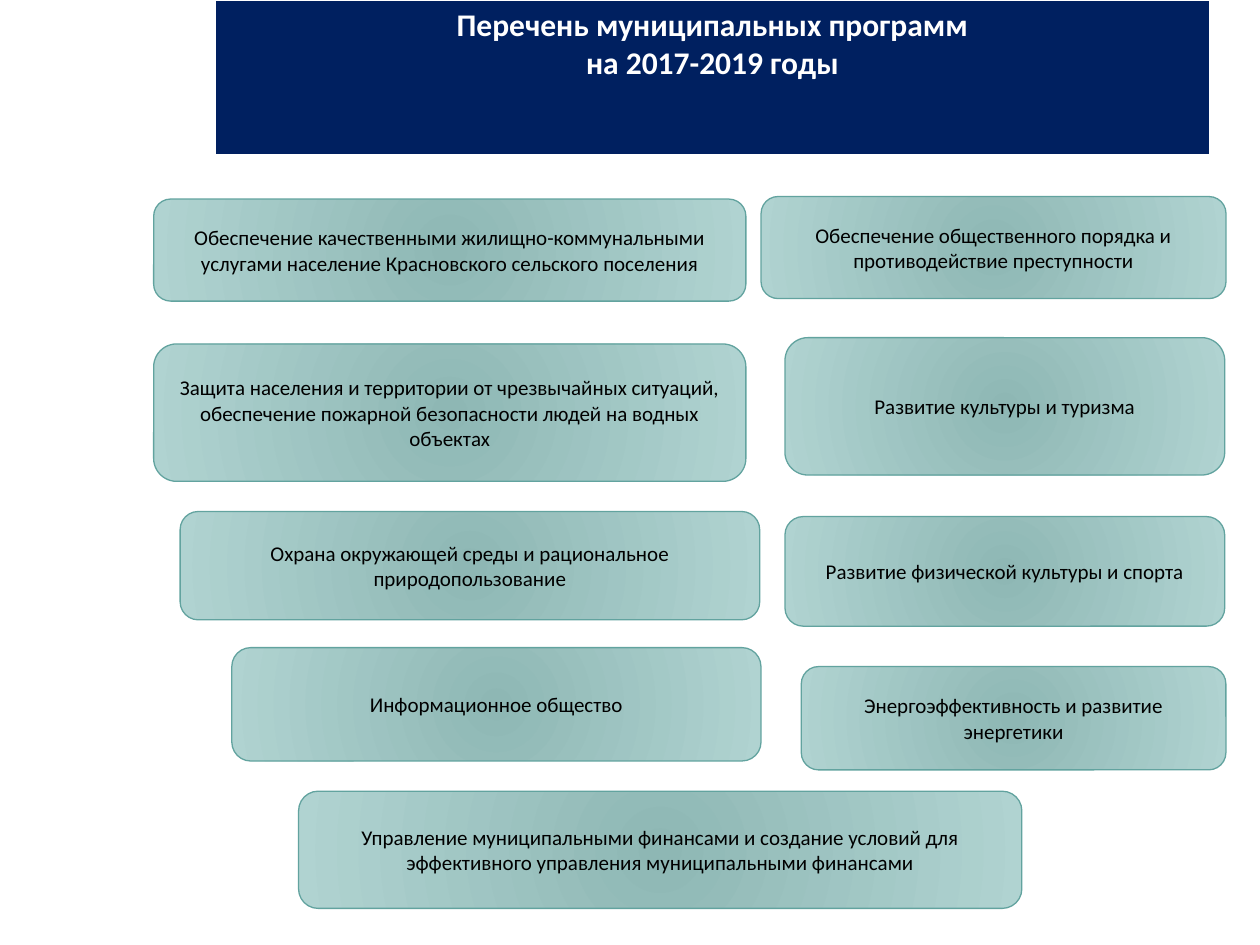
from lxml.etree import SubElement
from pptx import Presentation
from pptx.dml.color import RGBColor
from pptx.enum.shapes import MSO_SHAPE
from pptx.enum.text import MSO_ANCHOR, PP_ALIGN
from pptx.oxml.ns import qn
from pptx.util import Inches, Pt

NAVY = RGBColor(0x00, 0x20, 0x60)
WHITE = RGBColor(0xFF, 0xFF, 0xFF)
BLACK = RGBColor(0x00, 0x00, 0x00)
TEAL_DARK = RGBColor(0x8E, 0xB7, 0xB4)
TEAL_LIGHT = RGBColor(0xB0, 0xD3, 0xD1)
TEAL_LINE = RGBColor(0x62, 0xA3, 0x9F)

TITLE = ["Перечень муниципальных программ", "на 2017-2019 годы"]
PROGRAMS = [
    (1.22, 1.58, 4.7, 0.81, "Обеспечение качественными жилищно-коммунальными услугами "
                            "население Красновского сельского поселения"),
    (6.04, 1.56, 3.69, 0.81, "Обеспечение общественного порядка и противодействие преступности"),
    (6.23, 2.68, 3.49, 1.09, "Развитие культуры и туризма"),
    (6.23, 4.1, 3.49, 0.87, "Развитие физической культуры и спорта"),
    (1.22, 2.73, 4.7, 1.09, "Защита населения и территории от чрезвычайных ситуаций, "
                            "обеспечение пожарной безопасности людей на водных объектах"),
    (1.43, 4.06, 4.6, 0.86, "Охрана окружающей среды и рациональное природопользование"),
    (1.84, 5.14, 4.2, 0.9, "Информационное общество"),
    (6.36, 5.29, 3.37, 0.82, "Энергоэффективность и развитие энергетики"),
    (2.37, 6.28, 5.74, 0.93, "Управление муниципальными финансами и создание условий для "
                             "эффективного управления муниципальными финансами"),
]


class SlideBuilder:
    """Draws the title table and program boxes on one slide in a shared style."""

    font = "Calibri"

    def __init__(self, slide):
        self.s = slide

    def text(self, tf, lines, size, color, bold=False):
        for i, line in enumerate(lines):
            p = tf.add_paragraph() if i else tf.paragraphs[0]
            p.alignment = PP_ALIGN.CENTER
            r = p.add_run()
            r.text = line
            r.font.name = self.font
            r.font.size = Pt(size)
            r.font.bold = bold
            r.font.color.rgb = color

    def title(self, x, y, w, h, lines):
        frame = self.s.shapes.add_table(1, 1, Inches(x), Inches(y), Inches(w), Inches(h))
        cell = frame.table.cell(0, 0)
        cell.fill.solid()
        cell.fill.fore_color.rgb = NAVY
        self.text(cell.text_frame, lines, 18, WHITE, bold=True)

    def radial_fill(self, sp):
        sp.fill.gradient()
        for stop, color in zip(sp.fill.gradient_stops, (TEAL_DARK, TEAL_LIGHT)):
            stop.color.rgb = color
        grad = sp._element.spPr.find(qn("a:gradFill"))
        lin = grad.find(qn("a:lin"))
        radial = SubElement(grad, qn("a:path"), {"path": "circle"})
        SubElement(radial, qn("a:fillToRect"), dict.fromkeys("ltrb", "100000"))
        grad.replace(lin, radial)

    def program(self, x, y, w, h, label):
        sp = self.s.shapes.add_shape(
            MSO_SHAPE.ROUNDED_RECTANGLE, Inches(x), Inches(y), Inches(w), Inches(h))
        sp.shadow.inherit = False
        self.radial_fill(sp)
        sp.line.color.rgb = TEAL_LINE
        sp.line.width = Pt(0.75)
        tf = sp.text_frame
        tf.word_wrap = True
        tf.vertical_anchor = MSO_ANCHOR.MIDDLE
        self.text(tf, [label], 12, BLACK)


def main():
    prs = Presentation()
    prs.slide_width, prs.slide_height = Inches(10), Inches(7.5)
    builder = SlideBuilder(prs.slides.add_slide(prs.slide_layouts[6]))
    builder.title(1.71, 0, 7.89, 1.23, TITLE)
    for program in PROGRAMS:
        builder.program(*program)
    prs.save("out.pptx")


if __name__ == "__main__":
    main()
